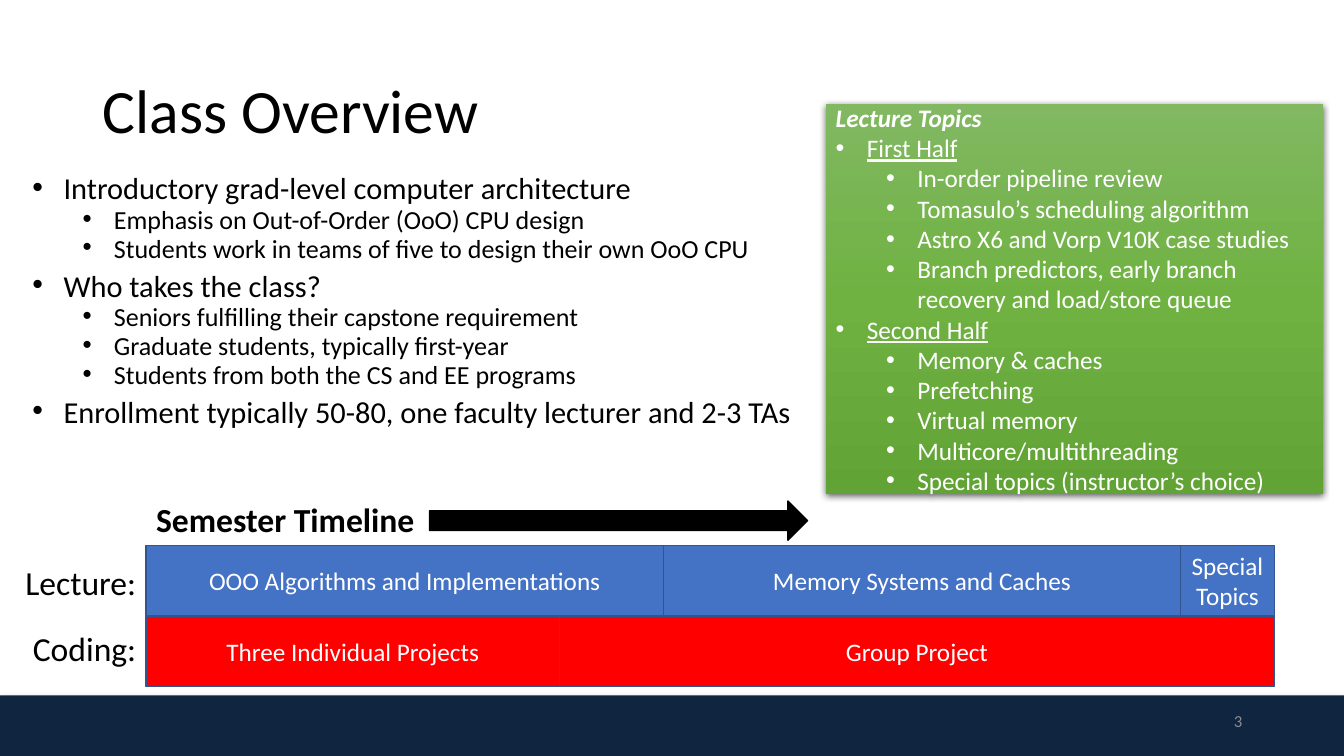
"""Build the class overview slide with its topic panel and semester timeline."""
from dataclasses import dataclass

from pptx import Presentation
from pptx.dml.color import RGBColor
from pptx.enum.shapes import MSO_SHAPE
from pptx.enum.text import MSO_ANCHOR, MSO_AUTO_SIZE, PP_ALIGN
from pptx.oxml import parse_xml
from pptx.oxml.ns import nsdecls, qn
from pptx.util import Inches, Pt

RECTANGLE, ARROW = MSO_SHAPE.RECTANGLE, MSO_SHAPE.RIGHT_ARROW
MIDDLE, TOP = MSO_ANCHOR.MIDDLE, MSO_ANCHOR.TOP
LEFT, CENTER, RIGHT = PP_ALIGN.LEFT, PP_ALIGN.CENTER, PP_ALIGN.RIGHT
FIXED_SIZE = MSO_AUTO_SIZE.NONE

FONT = "Calibri"
BLACK, WHITE, NAVY, GRAY = "000000", "FFFFFF", "10253F", "8C8C8C"
BLUE, RED, OUTLINE = "4472C4", "FF0000", "325491"
PANEL_STOPS = ((0, "81B861"), (50, "6FB242"), (100, "62A336"))
BULLET_INDENT = 0.31
LEVEL_INDENT = 0.5
TIMELINE_LEFT, TIMELINE_TOP, ROW_HEIGHT = 1.45, 5.41, 0.7


@dataclass(frozen=True)
class Area:
    """A rectangle on the slide, in inches."""
    left: float
    top: float
    width: float
    height: float


@dataclass(frozen=True)
class Style:
    """The look of a paragraph."""
    size: float
    color: str = BLACK
    bold: bool = False
    italic: bool = False
    underline: bool = False
    align: PP_ALIGN = LEFT


@dataclass(frozen=True)
class Topic:
    """A bulleted heading with its subordinate points."""
    heading: str
    points: tuple[str, ...] = ()


@dataclass(frozen=True)
class Segment:
    """One stretch of a timeline row."""
    text: str
    width: float


@dataclass(frozen=True)
class Row:
    """A labelled timeline row."""
    label: str
    label_top: float
    color: str
    segments: tuple[Segment, ...]


@dataclass(frozen=True)
class Shadow:
    """A downward shadow, with lengths in points and opacity in percent."""
    color: str
    opacity: int
    blur: float
    distance: float


OVERVIEW = (
    Topic("Introductory grad-level computer architecture", (
        "Emphasis on Out-of-Order (OoO) CPU design",
        "Students work in teams of five to design their own OoO CPU")),
    Topic("Who takes the class?", (
        "Seniors fulfilling their capstone requirement",
        "Graduate students, typically first-year",
        "Students from both the CS and EE programs")),
    Topic("Enrollment typically 50-80, one faculty lecturer and 2-3 TAs"),
)
LECTURES = (
    Topic("First Half", (
        "In-order pipeline review",
        "Tomasulo’s scheduling algorithm",
        "Astro X6 and Vorp V10K case studies",
        "Branch predictors, early branch recovery and load/store queue")),
    Topic("Second Half", (
        "Memory & caches", "Prefetching", "Virtual memory",
        "Multicore/multithreading", "Special topics (instructor’s choice)")),
)
TIMELINE = (
    Row("Lecture:", 5.53, BLUE, (
        Segment("OOO Algorithms and Implementations", 5.13),
        Segment("Memory Systems and Caches", 5.13),
        Segment("Special Topics", 0.93))),
    Row("Coding:", 6.18, RED, (
        Segment("Three Individual Projects", 4.1),
        Segment("Group Project", 7.09))),
)


def rgb(color: str) -> RGBColor:
    """Turn a hex string into a colour."""
    return RGBColor.from_string(color)


def place(shape, area: Area) -> None:
    """Move and size a shape."""
    shape.left, shape.top = Inches(area.left), Inches(area.top)
    shape.width, shape.height = Inches(area.width), Inches(area.height)


def write(para, text: str, style: Style) -> None:
    """Fill a paragraph and set its font."""
    para.add_run().text = text
    para.alignment = style.align
    font = para.font
    font.name, font.size = FONT, Pt(style.size)
    font.bold, font.italic, font.underline = style.bold, style.italic, style.underline
    font.color.rgb = rgb(style.color)


def next_para(frame):
    """Return the empty first paragraph or a new one."""
    first = frame.paragraphs[0]
    return frame.add_paragraph() if first.runs else first


def write_bullet(frame, text: str, level: int, style: Style, tight: bool) -> None:
    """Add a bulleted paragraph, optionally with tight line spacing."""
    is_first = not frame.paragraphs[0].runs
    para = next_para(frame)
    para.level = level
    para.line_spacing = 0.7 if tight else 1.0
    para.space_before = Pt((10, 5)[level] if tight and not is_first else 0)
    properties = para._p.get_or_add_pPr()
    properties.set("marL", str(Inches(BULLET_INDENT + level * LEVEL_INDENT)))
    properties.set("indent", str(-Inches(BULLET_INDENT)))
    properties.append(parse_xml(f'<a:buFont {nsdecls("a")} typeface="Arial"/>'))
    properties.append(parse_xml(f'<a:buChar {nsdecls("a")} char="•"/>'))
    write(para, text, style)


def write_topics(frame, topics: tuple[Topic, ...], heading: Style, point: Style,
                 tight: bool) -> None:
    """Write headings and their points as a two-level list."""
    for topic in topics:
        write_bullet(frame, topic.heading, 0, heading, tight)
        for text in topic.points:
            write_bullet(frame, text, 1, point, tight)


def add_block(page, kind: MSO_SHAPE, area: Area, fill: str, line: str = ""):
    """Add a filled preset shape without a shadow."""
    block = page.shapes.add_shape(kind, 0, 0, 0, 0)
    place(block, area)
    block.shadow.inherit = False
    block.fill.solid()
    block.fill.fore_color.rgb = rgb(fill)
    if line:
        block.line.color.rgb = rgb(line)
        block.line.width = Pt(1)
    else:
        block.line.fill.background()
    block.text_frame.word_wrap = True
    block.text_frame.vertical_anchor = MIDDLE
    return block


def add_label(page, area: Area, text: str, style: Style, anchor: MSO_ANCHOR = TOP) -> None:
    """Add a one-line text box."""
    box = page.shapes.add_textbox(0, 0, 0, 0)
    place(box, area)
    box.text_frame.word_wrap = True
    box.text_frame.vertical_anchor = anchor
    write(box.text_frame.paragraphs[0], text, style)


def add_shadow(shape, shadow: Shadow) -> None:
    """Give a shape a soft shadow below it."""
    shape._element.spPr.find(qn("a:effectLst")).append(parse_xml(
        f'<a:outerShdw {nsdecls("a")} blurRad="{Pt(shadow.blur)}" dist="{Pt(shadow.distance)}"'
        f' dir="5400000" rotWithShape="0"><a:srgbClr val="{shadow.color}">'
        f'<a:alpha val="{shadow.opacity * 1000}"/></a:srgbClr></a:outerShdw>'))


def add_gradient(shape, stops: tuple[tuple[int, str], ...]) -> None:
    """Replace a solid fill with a top-to-bottom gradient."""
    marks = "".join(f'<a:gs pos="{position * 1000}"><a:srgbClr val="{color}"/></a:gs>'
                    for position, color in stops)
    properties = shape._element.spPr
    properties.replace(properties.find(qn("a:solidFill")), parse_xml(
        f'<a:gradFill {nsdecls("a")} rotWithShape="1"><a:gsLst>{marks}</a:gsLst>'
        '<a:lin ang="5400000" scaled="0"/></a:gradFill>'))


def add_timeline(page) -> None:
    """Draw the timeline heading, arrow and rows."""
    add_label(page, Area(TIMELINE_LEFT, 4.9, 2.87, 0.5), "Semester Timeline", Style(24, bold=True))
    add_block(page, ARROW, Area(4.26, 4.97, 3.75, 0.39), BLACK, BLACK)
    for index, row in enumerate(TIMELINE):
        add_label(page, Area(0, row.label_top, TIMELINE_LEFT, 0.5), row.label,
                  Style(24, align=RIGHT))
        left = TIMELINE_LEFT
        for segment in row.segments:
            area = Area(left, TIMELINE_TOP + index * ROW_HEIGHT, segment.width, ROW_HEIGHT)
            block = add_block(page, RECTANGLE, area, row.color, OUTLINE)
            write(block.text_frame.paragraphs[0], segment.text, Style(18, WHITE, align=CENTER))
            left += segment.width


def main() -> None:
    """Build and save the deck."""
    deck = Presentation()
    deck.slide_width, deck.slide_height = Inches(13.33), Inches(7.5)
    page = deck.slides.add_slide(deck.slide_layouts[1])
    title, body = page.placeholders
    place(title, Area(0.92, 0.4, 11.5, 1.45))
    title.text_frame.vertical_anchor = MIDDLE
    title.text_frame.paragraphs[0].line_spacing = 0.9
    write(title.text_frame.paragraphs[0], "Class Overview", Style(44))
    place(body, Area(0.22, 1.73, 8.35, 2.83))
    body.text_frame.auto_size = FIXED_SIZE
    write_topics(body.text_frame, OVERVIEW, Style(21.7), Style(18.6), tight=True)

    footer = add_block(page, RECTANGLE, Area(0, 6.9, 13.33, 0.6), NAVY)
    add_shadow(footer, Shadow("808080", 35, 5, 1.8))
    panel = add_block(page, RECTANGLE, Area(8.19, 1.03, 4.93, 3.87), WHITE)
    add_gradient(panel, PANEL_STOPS)
    add_shadow(panel, Shadow(BLACK, 63, 4.5, 1.5))
    write(panel.text_frame.paragraphs[0], "Lecture Topics", Style(18, WHITE, bold=True, italic=True))
    write_topics(panel.text_frame, LECTURES, Style(18, WHITE, underline=True),
                 Style(18, WHITE), tight=False)
    add_timeline(page)
    add_label(page, Area(9.42, 6.95, 3, 0.4), "3", Style(12, GRAY, align=RIGHT), MIDDLE)
    deck.save("out.pptx")


if __name__ == "__main__":
    main()
